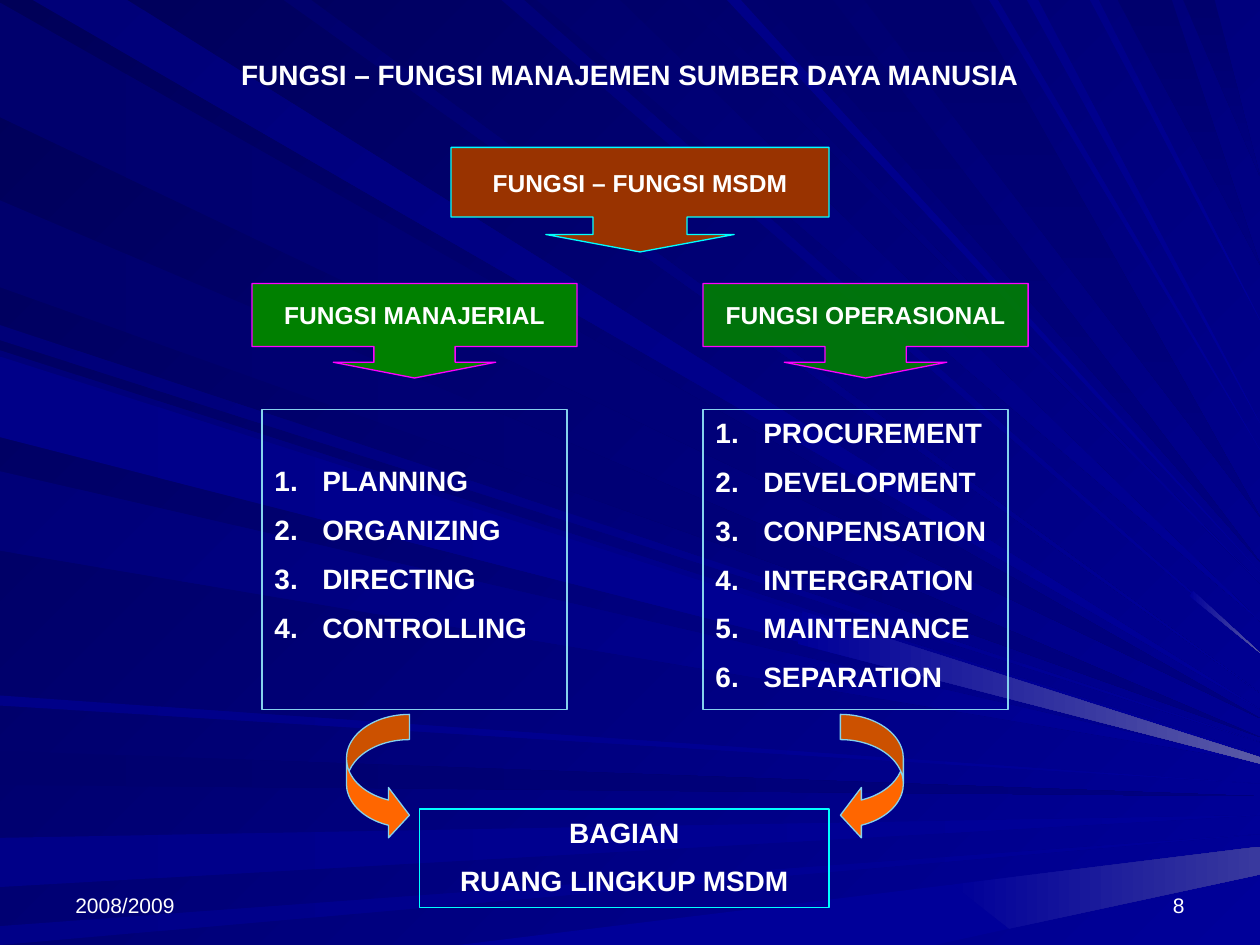
from lxml.etree import SubElement
from pptx import Presentation
from pptx.dml.color import RGBColor
from pptx.enum.shapes import MSO_SHAPE as SHAPE
from pptx.enum.text import MSO_ANCHOR as ANCHOR, PP_ALIGN as ALIGN
from pptx.oxml.ns import qn
from pptx.util import Inches, Pt

COLORS = {
    "text": "FFFFFF", "brown": "993300", "green": "008000", "orange": "FF6600",
    "cyan": "00FFFF", "magenta": "FF00FF", "pale": "86D1EC", "night": "000058",
    "dark": "00006D", "deep": "000078", "navy": "000080", "mid": "000088",
    "blue": "000099", "glow": "5A5AA6", "haze": "39399E",
}
FONT = "Arial"
WIDTH, HEIGHT = 10, 7.5
TITLE = "FUNGSI – FUNGSI MANAJEMEN SUMBER DAYA MANUSIA"
FOOTERS = [("2008/2009", 0.5, ALIGN.LEFT), ("8", 7.17, ALIGN.RIGHT)]

CALLOUTS = [
    ("FUNGSI – FUNGSI MSDM", (3.58, 1.17, 3, 0.83), 0.9, "brown", "cyan", 100),
    ("FUNGSI MANAJERIAL", (2, 2.25, 2.58, 0.75), 0.86, "green", "magenta", 100),
    ("FUNGSI OPERASIONAL", (5.58, 2.25, 2.58, 0.75), 0.86, "green", "magenta", 90),
]
LISTS = [
    (2.08, 0.43, ["PLANNING", "ORGANIZING", "DIRECTING", "CONTROLLING"]),
    (5.58, 0.05, ["PROCUREMENT", "DEVELOPMENT", "CONPENSATION",
                  "INTERGRATION", "MAINTENANCE", "SEPARATION"]),
]
SCOPE = ["BAGIAN", "RUANG LINGKUP MSDM"]
ARROWS = [(SHAPE.CURVED_LEFT_ARROW, 6.67), (SHAPE.CURVED_RIGHT_ARROW, 2.75)]

RAYS = [
    ("left", "dark", "navy", 0, [(0.02, 0.93, 5.7), (5.96, 6.23, 6.32), (1.59, 2.28, 5.85)]),
    ("top", "deep", "blue", 45, [(0.26, 1.01, 5.63), (3.98, 4.16, 5.18)]),
    ("left", "mid", "blue", 0, [(6.65, 7.04, 6.47), (7.35, 7.5, 6.62)]),
    ("left", "deep", "blue", 45, [(2.58, 2.7, 5.89)]),
    ("top", "dark", "blue", 45, [(4.26, 4.92, 4.93), (5.4, 5.52, 4.63)]),
    ("top", "dark", "navy", 90, [(6.06, 6.61, 4.46), (8.87, 9.3, 2.1), (9.39, 9.64, 1.4)]),
    ("left", "deep", "blue", 45, [(2.78, 3.42, 5.99), (3.74, 4.37, 6.05)]),
    ("left", "mid", "blue", 0, [(5.52, 5.6, 6.22)]),
    ("top", "dark", "blue", 45, [(2.25, 2.47, 5.5)]),
    ("top", "dark", "navy", 90, [(6.86, 7.7, 4.1)]),
    ("top", "mid", "blue", 45, [(5.77, 5.88, 4.54), (7.85, 7.92, 3.57),
                                (8.15, 8.24, 3.36), (8.65, 8.72, 2.54)]),
    ("left", "mid", "blue", 0, [(2.83, 3.47, 6.03)]),
]
GLEAMS = [
    ("blue", "blue", [(7.42, 7.5), (8.01, 7.37), (7.56, 7.02), (3.64, 7.5)]),
    ("blue", "haze", [(10, 6.94), (10, 6.72), (7.56, 7.02), (8.01, 7.37)]),
    ("blue", "glow", [(9.44, 4.73), (9.47, 4.69), (10, 5.18)]),
    ("blue", "glow", [(6.33, 5.11), (6.37, 4.85), (10, 6.01), (10, 6.06)]),
]


def rgb(name):
    return RGBColor.from_string(COLORS[name])


def paint_gradient(fill, start, end, angle):
    fill.gradient()
    fill.gradient_angle = 360 - angle
    for stop, color, position in zip(fill.gradient_stops, (start, end), (0, 1)):
        stop.color.rgb = rgb(color)
        stop.position = position


def add_polygon(shapes, start, end, angle, points):
    corners = [(Inches(x), Inches(y)) for x, y in points]
    builder = shapes.build_freeform(*corners[0], scale=1.0)
    builder.add_line_segments(corners[1:], close=True)
    sp = builder.convert_to_shape()
    sp.shadow.inherit = False
    sp.line.fill.background()
    paint_gradient(sp.fill, start, end, angle)


def add_background(s):
    paint_gradient(s.background.fill, "night", "blue", 45)
    for side, start, end, angle, rays in RAYS:
        for a, b, tip in rays:
            base = [(0, a), (0, b)] if side == "left" else [(a, 0), (b, 0)]
            add_polygon(s.shapes, start, end, angle, base + [(WIDTH, tip)])
    for start, end, points in GLEAMS:
        add_polygon(s.shapes, start, end, 0, points)


def add_shape(shapes, kind, box, line, fill=None, adjustments=()):
    sp = shapes.add_shape(kind, *map(Inches, box))
    sp.shadow.inherit = False
    sp.line.color.rgb = rgb(line)
    sp.line.width = Pt(0.75)
    if fill:
        sp.fill.solid()
        sp.fill.fore_color.rgb = rgb(fill)
    else:
        sp.fill.background()
    for i, value in enumerate(adjustments):
        sp.adjustments[i] = value
    return sp


def write(sp, lines, size, align, anchor, bold=True, wrap=True, numbered=False):
    tf = sp.text_frame
    tf.word_wrap = wrap
    tf.vertical_anchor = anchor
    for i, line in enumerate(lines):
        p = tf.add_paragraph() if i else tf.paragraphs[0]
        p.alignment = align
        p.space_before = Pt(8.7 if i else 0)
        r = p.add_run()
        r.text = line
        r.font.name = FONT
        r.font.size = Pt(size)
        r.font.bold = bold
        r.font.color.rgb = rgb("text")
        if numbered:
            pPr = p._p.get_or_add_pPr()
            pPr.set("marL", str(Inches(0.38)))
            pPr.set("indent", str(-Inches(0.38)))
            SubElement(pPr, qn("a:buFont"), typeface="+mj-lt")
            SubElement(pPr, qn("a:buAutoNum"), type="arabicPeriod")


def main():
    prs = Presentation()
    prs.slide_width, prs.slide_height = Inches(WIDTH), Inches(HEIGHT)
    s = prs.slides.add_slide(prs.slide_layouts[6])
    shapes = s.shapes
    add_background(s)

    for text, left, align in FOOTERS:
        sp = shapes.add_textbox(*map(Inches, (left, 6.83, 2.33, 0.5)))
        write(sp, [text], 12, align, ANCHOR.BOTTOM, bold=False)
    sp = shapes.add_textbox(*map(Inches, (0.5, 0.3, 9, 0.58)))
    write(sp, [TITLE], 16, ALIGN.CENTER, ANCHOR.MIDDLE)

    for text, box, spread, fill, line, opacity in CALLOUTS:
        sp = add_shape(shapes, SHAPE.DOWN_ARROW_CALLOUT, box, line, fill,
                       (spread, spread, 1 / 6, 2 / 3))
        write(sp, [text], 14, ALIGN.CENTER, ANCHOR.MIDDLE, wrap=False)
        if opacity < 100:
            color = sp._element.spPr.find(qn("a:solidFill"))[0]
            SubElement(color, qn("a:alpha"), val=str(opacity * 1000))

    for left, inset, items in LISTS:
        sp = add_shape(shapes, SHAPE.RECTANGLE, (left, 3.25, 2.42, 2.38), "pale")
        sp.text_frame.margin_top = Inches(inset)
        write(sp, items, 16, ALIGN.LEFT, ANCHOR.TOP, numbered=True)

    sp = add_shape(shapes, SHAPE.RECTANGLE, (3.33, 6.42, 3.25, 0.78), "cyan")
    write(sp, SCOPE, 16, ALIGN.CENTER, ANCHOR.TOP)

    for kind, left in ARROWS:
        add_shape(shapes, kind, (left, 5.67, 0.5, 1), "pale", "orange", (0.4, 0.8, 1 / 3))

    prs.save("out.pptx")


if __name__ == "__main__":
    main()
